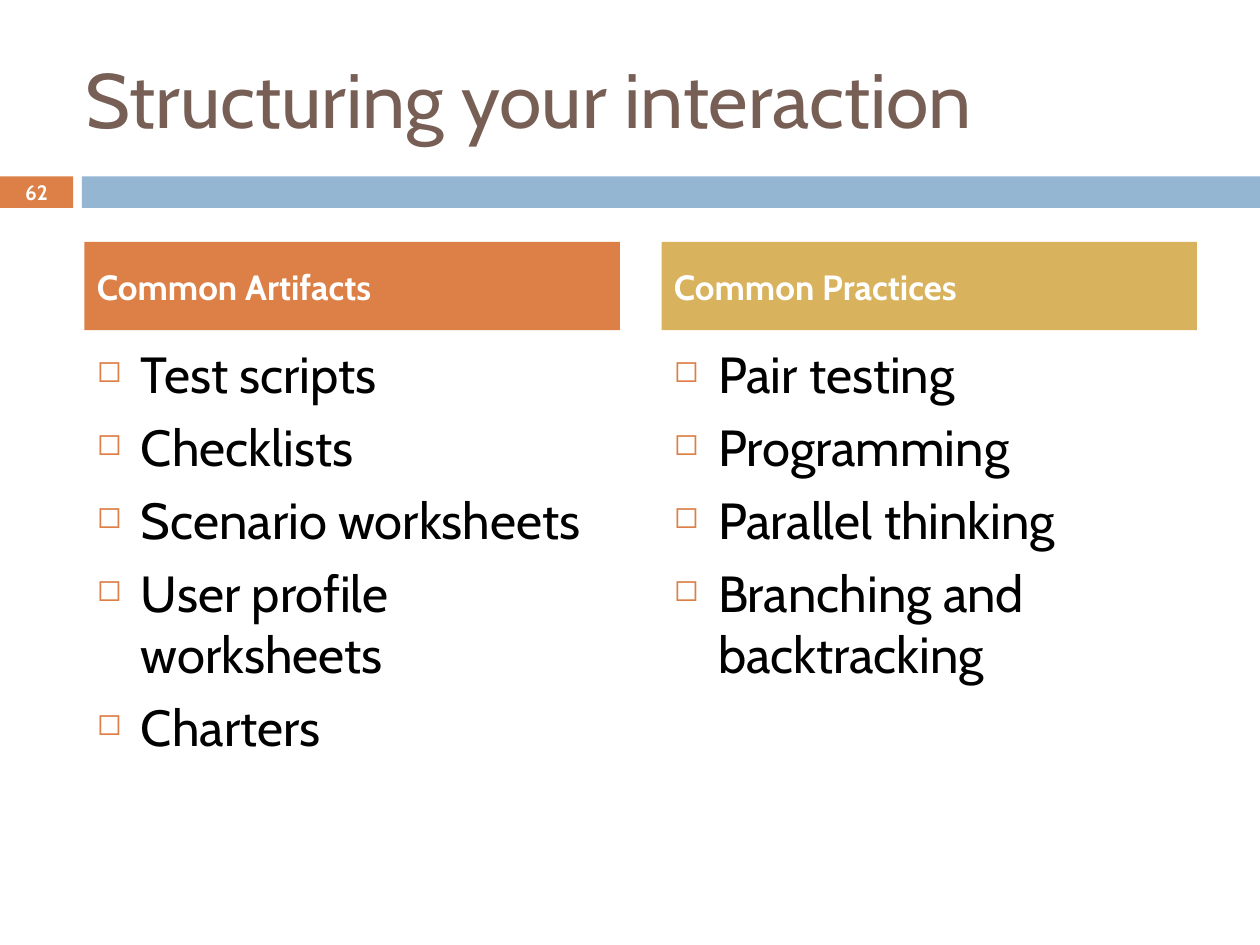
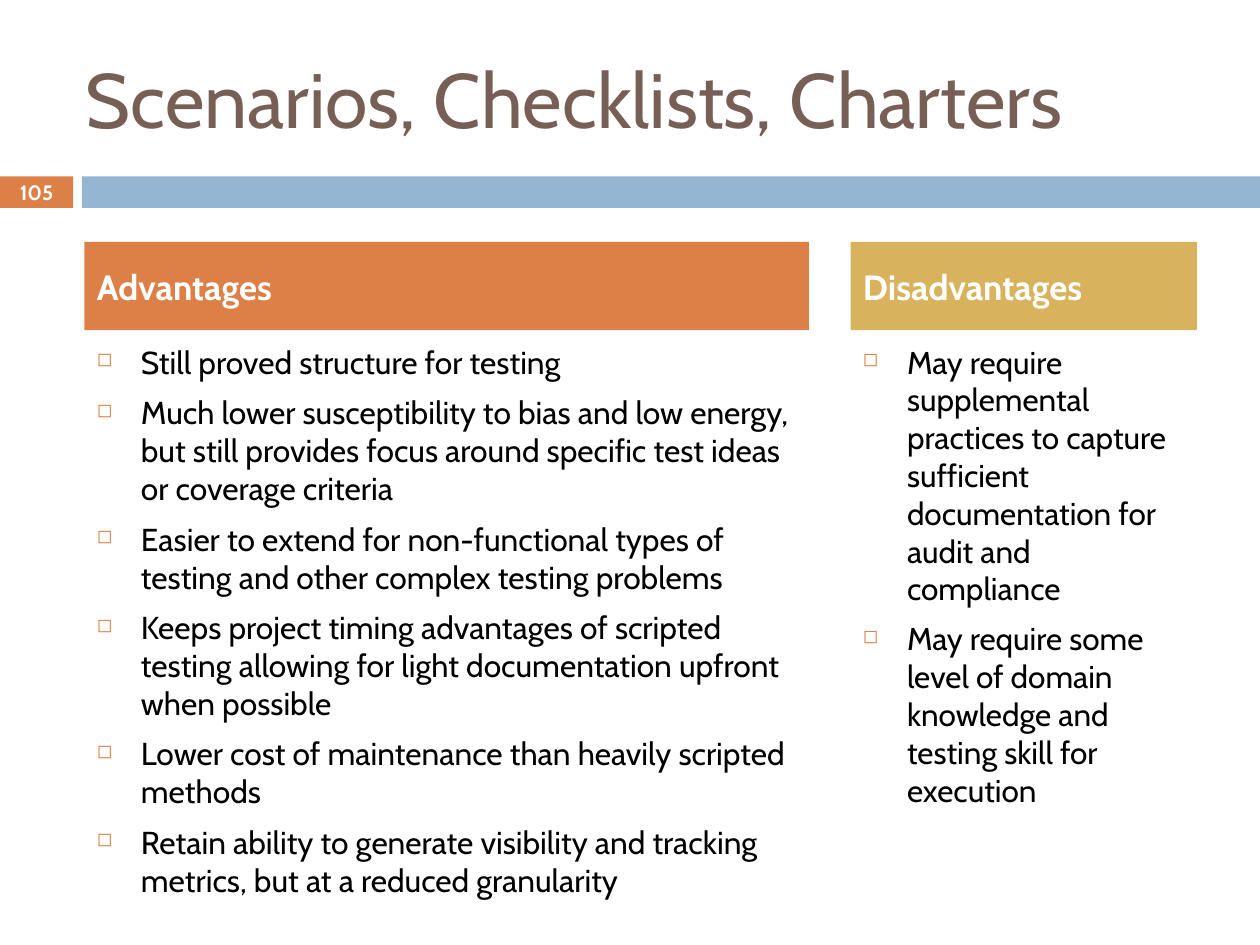
from lxml import etree
from pptx import Presentation
from pptx import util as u
from pptx.dml import color
from pptx.enum import shapes, text
from pptx.oxml import ns

FONT = "Cabin"
ORANGE, BLUE, GOLD = "DD8047", "94B6D2", "D8B25C"
BROWN, BLACK, WHITE = "775F55", "000000", "FFFFFF"
TITLE_BOX = (0.58, 0.3, 8.92, 0.95)
BAND_BOX = (0, 1.4, 10, 0.25)
CONTENT_BOX = (0.67, 1.92, 8.83, 4.67)
HEADING_HEIGHT, BODY_OFFSET, COLUMN_GAP = 0.7, 0.75, 0.33
TITLE_STYLE = {"size": u.Pt(44), "name": FONT, "bold": False}
HEADING_STYLE = {"size": u.Pt(20), "name": FONT, "bold": True}
NUMBER_STYLE = {"size": u.Pt(11.9), "name": FONT, "bold": True}

SLIDES = [
    {
        "title": "Structuring your interaction",
        "number": "62",
        "columns": [
            {"heading": "Common Artifacts", "width": 4.25, "size": 29, "items": [
                "Test scripts",
                "Checklists",
                "Scenario worksheets",
                "User profile worksheets",
                "Charters",
            ]},
            {"heading": "Common Practices", "width": 4.25, "size": 29, "items": [
                "Pair testing",
                "Programming",
                "Parallel thinking",
                "Branching and backtracking",
            ]},
        ],
    },
    {
        "title": "Scenarios, Checklists, Charters",
        "number": "105",
        "columns": [
            {"heading": "Advantages", "width": 5.75, "size": 18.1, "items": [
                "Still proved structure for testing",
                "Much lower susceptibility to bias and low energy, but still provides "
                "focus around specific test ideas or coverage criteria",
                "Easier to extend for non-functional types of testing and other "
                "complex testing problems",
                "Keeps project timing advantages of scripted testing allowing for "
                "light documentation upfront when possible",
                "Lower cost of maintenance than heavily scripted methods",
                "Retain ability to generate visibility and tracking metrics, but at a "
                "reduced granularity",
            ]},
            {"heading": "Disadvantages", "width": 2.75, "size": 18, "items": [
                "May require supplemental practices to capture sufficient "
                "documentation for audit and compliance",
                "May require some level of domain knowledge and testing skill for "
                "execution",
            ]},
        ],
    },
]


def rgb(value):
    return color.RGBColor.from_string(value)


def inches(box):
    return [u.Inches(length) for length in box]


def set_attributes(target, values):
    for name, value in values.items():
        setattr(target, name, value)


def write(paragraph, words, style, ink, align=text.PP_ALIGN.LEFT):
    paragraph.alignment = align
    run = paragraph.add_run()
    run.text = words
    set_attributes(run.font, style)
    run.font.color.rgb = rgb(ink)


def format_frame(shape, anchor, **extra):
    frame = shape.text_frame
    set_attributes(frame, {"word_wrap": True, "auto_size": text.MSO_AUTO_SIZE.NONE,
                           "vertical_anchor": anchor, **extra})
    return frame


def add_block(slide, box, fill):
    block = slide.shapes.add_shape(shapes.MSO_SHAPE.RECTANGLE, *inches(box))
    block.shadow.inherit = False
    block.fill.solid()
    block.fill.fore_color.rgb = rgb(fill)
    block.line.fill.background()
    return block


def add_bullet(paragraph):
    set_attributes(paragraph, {"space_before": u.Pt(0)})
    properties = paragraph._p.get_or_add_pPr()
    properties.set("marL", str(u.Inches(0.35)))
    properties.set("indent", str(-u.Inches(0.35)))
    bullet_color = etree.SubElement(properties, ns.qn("a:buClr"))
    etree.SubElement(bullet_color, ns.qn("a:srgbClr"), val=ORANGE)
    etree.SubElement(properties, ns.qn("a:buSzPct"), val="60000")
    etree.SubElement(properties, ns.qn("a:buChar"), char="◻")


def place_title(slide, box, words):
    title = slide.shapes.title
    set_attributes(title, dict(zip(("left", "top", "width", "height"), inches(box))))
    frame = format_frame(title, text.MSO_ANCHOR.MIDDLE)
    write(frame.paragraphs[0], words, TITLE_STYLE, BROWN)


def add_band(slide, box, number):
    left, top, width, height = box
    number_width, bar_offset = 0.58, 0.65
    number_block = add_block(slide, (left, top, number_width, height), ORANGE)
    add_block(slide, (left + bar_offset, top, width - bar_offset, height), BLUE)
    frame = format_frame(number_block, text.MSO_ANCHOR.MIDDLE, margin_left=0,
                         margin_right=0, margin_top=0, margin_bottom=0)
    write(frame.paragraphs[0], number, NUMBER_STYLE, WHITE, text.PP_ALIGN.CENTER)


def add_column(slide, box, column, fill):
    left, top, width, height = box
    heading = add_block(slide, (left, top, width, HEADING_HEIGHT), fill)
    heading_frame = format_frame(heading, text.MSO_ANCHOR.MIDDLE)
    write(heading_frame.paragraphs[0], column["heading"], HEADING_STYLE, WHITE)

    body_box = (left, top + BODY_OFFSET, width, height - BODY_OFFSET)
    body = slide.shapes.add_textbox(*inches(body_box))
    frame = format_frame(body, text.MSO_ANCHOR.TOP)
    style = {"size": u.Pt(column["size"]), "name": FONT}
    for index, item in enumerate(column["items"]):
        paragraph = frame.add_paragraph() if index else frame.paragraphs[0]
        add_bullet(paragraph)
        if index:
            paragraph.space_before = u.Pt(7)
        write(paragraph, item, style, BLACK)


def add_comparison(slide, box, columns):
    left, top, _, height = box
    for column, fill in zip(columns, (ORANGE, GOLD)):
        add_column(slide, (left, top, column["width"], height), column, fill)
        left += column["width"] + COLUMN_GAP


def build_slide(presentation, content):
    slide = presentation.slides.add_slide(presentation.slide_layouts[5])
    place_title(slide, TITLE_BOX, content["title"])
    add_band(slide, BAND_BOX, content["number"])
    add_comparison(slide, CONTENT_BOX, content["columns"])


def main():
    presentation = Presentation()
    presentation.slide_width = u.Inches(10)
    presentation.slide_height = u.Inches(7.5)
    for content in SLIDES:
        build_slide(presentation, content)
    presentation.save("out.pptx")


if __name__ == "__main__":
    main()
